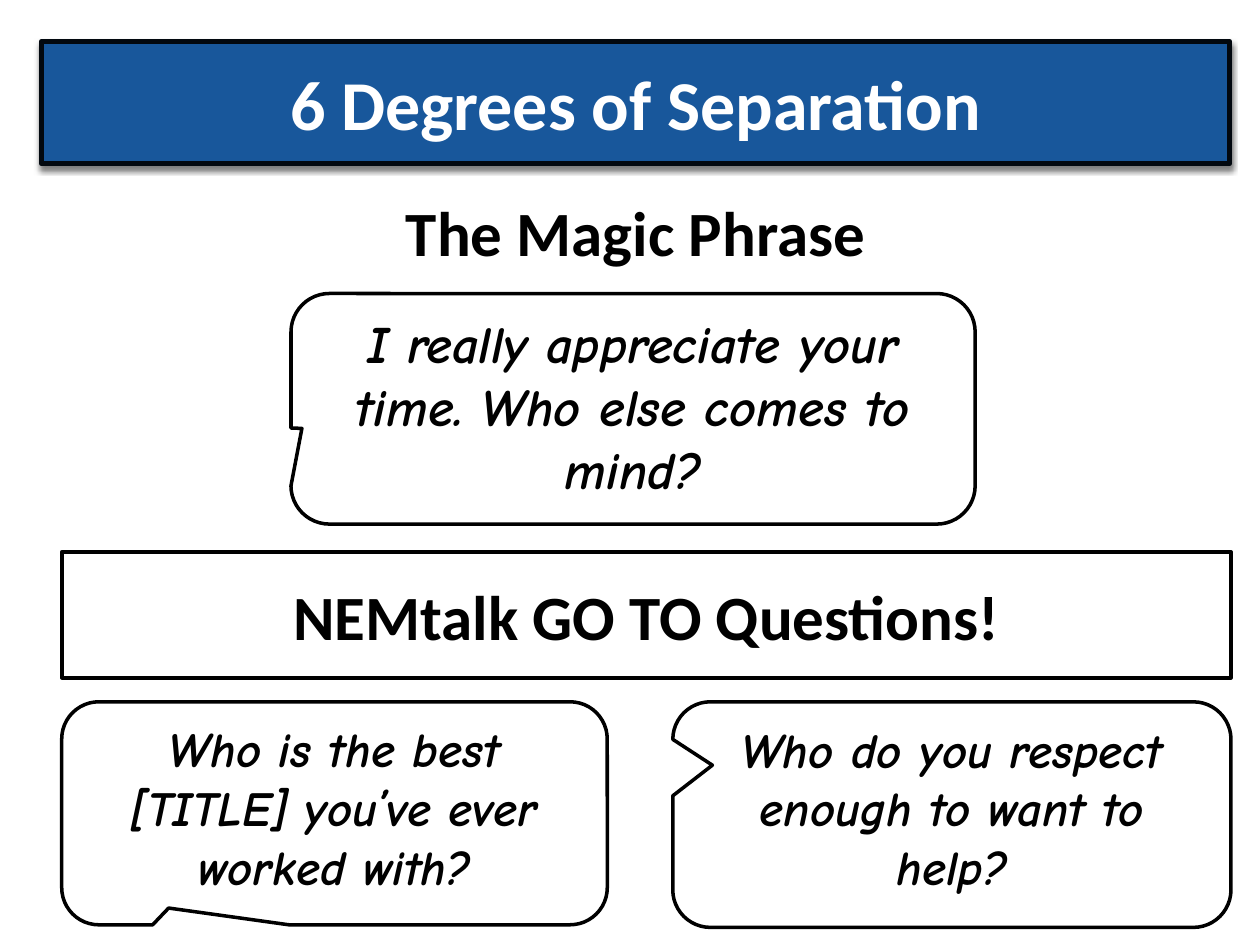
"""Build the slide of networking questions with banners and speech callouts."""
import pptx
import pptx.dml.color
import pptx.enum.shapes
import pptx.enum.text
import pptx.oxml
import pptx.oxml.ns
import pptx.util

Inches = pptx.util.Inches
Pt = pptx.util.Pt
RGBColor = pptx.dml.color.RGBColor
Shape = pptx.enum.shapes.MSO_SHAPE
Anchor = pptx.enum.text.MSO_ANCHOR

BLUE = RGBColor(0x18, 0x57, 0x9B)
NAVY = RGBColor(0x02, 0x08, 0x0F)
BLACK = RGBColor(0, 0, 0)
WHITE = RGBColor(255, 255, 255)

SHADOW = (
    f'<a:effectLst {pptx.oxml.ns.nsdecls("a")}>'
    '<a:outerShdw blurRad="38100" dist="25400" dir="5400000" rotWithShape="0">'
    '<a:srgbClr val="000000"><a:alpha val="50000"/></a:srgbClr>'
    '</a:outerShdw></a:effectLst>'
)


class Board:
    banner_font = "Calibri"
    speech_font = "Comic Neue"

    def __init__(self, slide):
        self.slide = slide

    def box(self, kind, place, text, size, font, anchor, fill=WHITE, line=BLACK, width=2, color=BLACK):
        shape = self.slide.shapes.add_shape(kind, *(Inches(length) for length in place))
        shape.shadow.inherit = False
        shape.fill.solid()
        shape.fill.fore_color.rgb = fill
        shape.line.color.rgb = line
        shape.line.width = Pt(width)
        frame = shape.text_frame
        frame.word_wrap = True
        frame.vertical_anchor = anchor
        frame.text = text
        paragraph = frame.paragraphs[0]
        paragraph.alignment = pptx.enum.text.PP_ALIGN.CENTER
        paragraph.font.name = font
        paragraph.font.size = Pt(size)
        paragraph.font.bold = True
        paragraph.font.color.rgb = color
        return shape

    def banner(self, place, text, size=36, **style):
        return self.box(Shape.RECTANGLE, place, text, size, self.banner_font, Anchor.MIDDLE, **style)

    def title(self, place, text):
        shape = self.banner(place, text, 40, fill=BLUE, line=NAVY, width=3, color=WHITE)
        properties = shape.fill._xPr
        properties.remove(properties.find(pptx.oxml.ns.qn("a:effectLst")))
        properties.append(pptx.oxml.parse_xml(SHADOW))

    def callout(self, place, text, tip, size=28):
        shape = self.box(Shape.ROUNDED_RECTANGULAR_CALLOUT, place, text, size, self.speech_font, Anchor.TOP)
        shape.text_frame.paragraphs[0].font.italic = True
        shape.adjustments[0], shape.adjustments[1] = tip


def main():
    deck = pptx.Presentation()
    deck.slide_width, deck.slide_height = Inches(10), Inches(7.5)
    board = Board(deck.slides.add_slide(deck.slide_layouts[6]))
    board.title((0.33, 0.33, 9.43, 0.97), "6 Degrees of Separation")
    board.banner((0.33, 1.5, 9.43, 0.67), "The Magic Phrase", line=WHITE)
    board.callout((2.31, 2.33, 5.43, 1.83), "I really appreciate your time. Who else comes to mind?",
                  (-0.484, 0.085), 30)
    board.banner((0.49, 4.38, 9.28, 1), "NEMtalk GO TO Questions!")
    board.callout((0.49, 5.57, 4.33, 1.77), "Who is the best [TITLE] you’ve ever worked with?",
                  (-0.304, 0.425))
    board.callout((5.34, 5.57, 4.43, 1.79), "Who do you respect enough to want to help?",
                  (-0.429, -0.219))
    deck.save("out.pptx")


if __name__ == "__main__":
    main()
